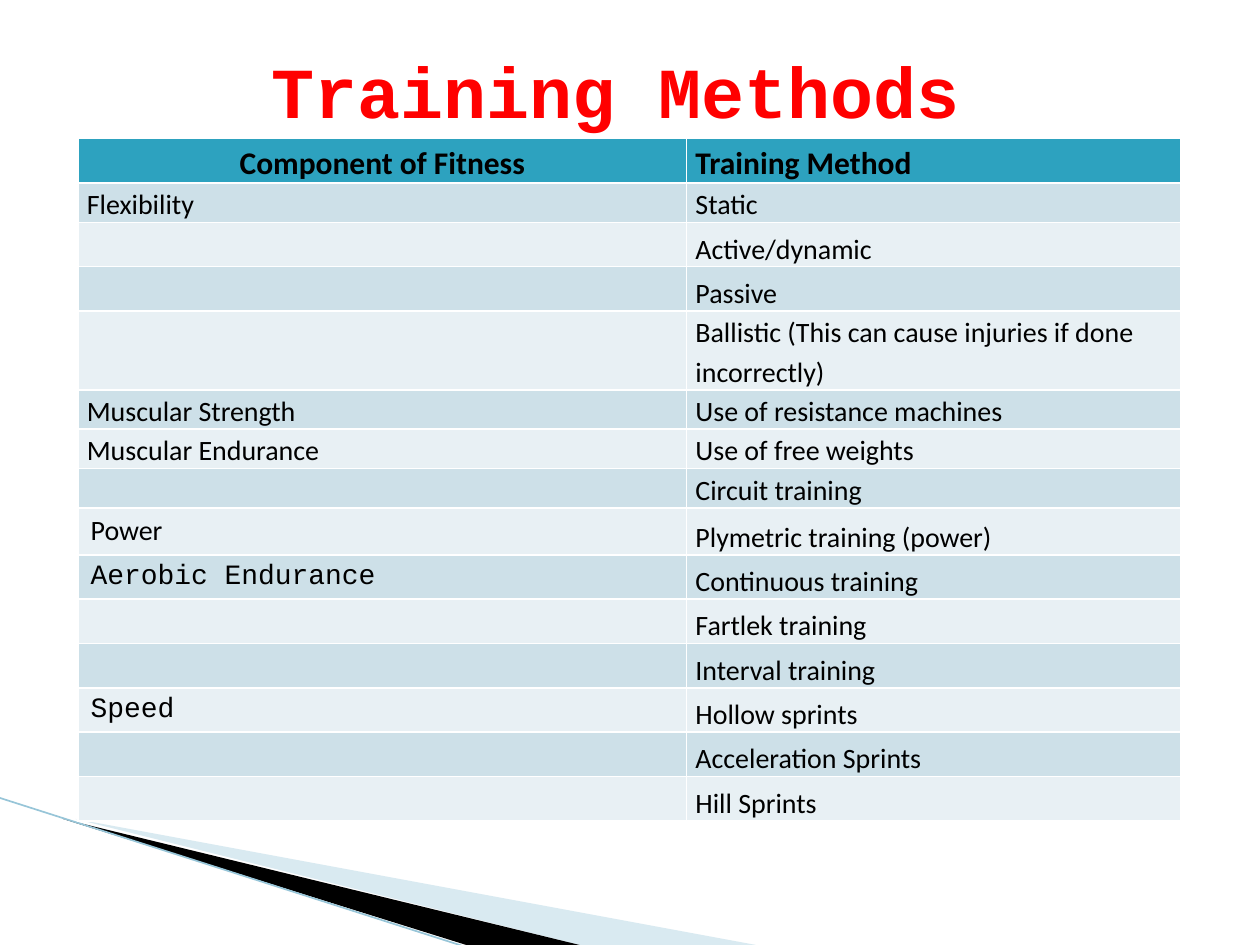
"""Build the Training Methods slide: fitness components and how to train them."""
from dataclasses import dataclass

from lxml import etree
from pptx import Presentation, util as u
from pptx.dml.color import RGBColor
from pptx.enum import shapes, text
from pptx.oxml import ns


@dataclass(frozen=True)
class Theme:
    """Colours, fonts and type sizes."""
    title: str = "FF0000"
    ink: str = "000000"
    header: str = "2DA2BF"
    bands: tuple = ("CDE0E8", "E8F0F4")
    swoosh: str = "A0CBDC"
    edge: str = "97C5D8"
    sans: str = "Calibri"
    mono: str = "Courier New"
    title_size: float = 41
    header_size: float = 18
    body_size: float = 16


class Deck:
    """Holds the theme and the slide, on a grid of 100 columns by 75 rows."""

    def __init__(self, theme):
        """Start a presentation with one blank slide."""
        self.theme = theme
        self.prs = Presentation()
        self.prs.slide_width, self.prs.slide_height = u.Inches(10), u.Inches(7.5)
        self.unit = self.prs.slide_width / 100
        self.slide = self.prs.slides.add_slide(self.prs.slide_layouts[6])

    def grid(self, *counts):
        """Turn counts of grid units into lengths."""
        return [u.Emu(round(count * self.unit)) for count in counts]

    @staticmethod
    def apply(target, **values):
        """Set each named value on the target."""
        for name, value in values.items():
            setattr(target, name, value)

    def put_text(self, frame, words, color, align=None, spacing=None, **font):
        """Put one paragraph into a text frame."""
        paragraph = frame.paragraphs[0]
        self.apply(paragraph, alignment=align, line_spacing=spacing)
        run = paragraph.add_run()
        run.text = words
        self.apply(run.font, **font)
        run.font.color.rgb = RGBColor.from_string(color)

    def wedge(self, points, color, opacity=None):
        """Draw a filled outline without a line."""
        builder = self.slide.shapes.build_freeform(*points[0], scale=self.unit)
        builder.add_line_segments(points[1:], close=True)
        shape = builder.convert_to_shape()
        shape.shadow.inherit = False
        shape.line.fill.background()
        shape.fill.solid()
        shape.fill.fore_color.rgb = RGBColor.from_string(color)
        if opacity:
            tint = shape._element.spPr.find(".//" + ns.qn("a:srgbClr"))
            etree.SubElement(tint, ns.qn("a:alpha"), val=str(opacity * 1000))

    def line(self, start, end, color, width):
        """Draw a straight line."""
        rule = self.slide.shapes.add_connector(
            shapes.MSO_CONNECTOR.STRAIGHT, *self.grid(*start, *end))
        rule.line.color.rgb = RGBColor.from_string(color)
        rule.line.width = u.Pt(width)
        etree.SubElement(rule._element.spPr, ns.qn("a:effectLst"))

    def title(self, words, box):
        """Add the centred heading."""
        frame = self.slide.shapes.add_textbox(*self.grid(*box)).text_frame
        self.apply(frame, word_wrap=True, margin_top=u.Inches(0.23),
                   vertical_anchor=text.MSO_ANCHOR.MIDDLE)
        self.put_text(frame, words, self.theme.title, text.PP_ALIGN.CENTER,
                      name=self.theme.mono, size=u.Pt(self.theme.title_size), bold=True)

    def cell(self, cell, words, fill, loose=False, **style):
        """Fill a cell; loose cells keep the default margins and top anchor."""
        cell.fill.solid()
        cell.fill.fore_color.rgb = RGBColor.from_string(fill)
        if not loose:
            side = u.Inches(0.07)
            self.apply(cell, margin_left=side, margin_right=side, margin_top=0,
                       margin_bottom=0, vertical_anchor=text.MSO_ANCHOR.BOTTOM)
            style["spacing"] = 1.15
        if words:
            self.put_text(cell.text_frame, words, self.theme.ink, **style)

    def table(self, headings, methods, corner, columns, heights):
        """Add the banded table of components and methods."""
        box = self.grid(*corner, sum(columns), sum(heights))
        table = self.slide.shapes.add_table(len(heights), len(columns), *box).table
        for column, width in zip(table.columns, self.grid(*columns)):
            column.width = width
        for row, height in zip(table.rows, self.grid(*heights)):
            row.height = height
        for index, (heading, align) in enumerate(headings):
            self.cell(table.cell(0, index), heading, self.theme.header, align=align,
                      name=self.theme.sans, size=u.Pt(self.theme.header_size), bold=True)
        loose_fonts = {"Power": self.theme.sans, "Aerobic Endurance": self.theme.mono,
                       "Speed": self.theme.mono}
        for number, row in enumerate(methods, 1):
            fill = self.theme.bands[(number - 1) % 2]
            for index, words in enumerate(row):
                self.cell(table.cell(number, index), words, fill, words in loose_fonts,
                          name=loose_fonts.get(words, self.theme.sans),
                          size=u.Pt(self.theme.body_size), bold=False)


HEADINGS = [("Component of Fitness", text.PP_ALIGN.CENTER), ("Training Method", None)]
METHODS = [
    ("Flexibility", "Static"),
    ("", "Active/dynamic"),
    ("", "Passive"),
    ("", "Ballistic (This can cause injuries if done incorrectly)"),
    ("Muscular Strength", "Use of resistance machines"),
    ("Muscular Endurance", "Use of free weights"),
    ("", "Circuit training"),
    ("Power", "Plymetric training (power)"),
    ("Aerobic Endurance", "Continuous training"),
    ("", "Fartlek training"),
    ("", "Interval training"),
    ("Speed", "Hollow sprints"),
    ("", "Acceleration Sprints"),
    ("", "Hill Sprints"),
]
TIGHT, ROOMY = 3.12, 3.52
HEIGHTS = [ROOMY, TIGHT, ROOMY, ROOMY, 2 * TIGHT, *[TIGHT] * 3, 3.72, *[ROOMY] * 6]


def main():
    """Build and save the slide."""
    theme = Theme()
    deck = Deck(theme)
    deck.wedge([(5.5, 65.1), (59.5, 75.1), (45.6, 75.1), (5.5, 65)], theme.swoosh, 40)
    deck.wedge([(5.3, 64.9), (45.7, 75.1), (37.2, 75.2), (5.4, 65)], theme.ink)
    deck.line((-0.1, 63.3), (37.1, 75.2), theme.edge, 0.95)
    deck.table(HEADINGS, METHODS, (6.2, 11), (48.3, 39.2), HEIGHTS)
    deck.title("Training Methods", (3.9, 0, 90, 12.5))
    deck.prs.save("out.pptx")


if __name__ == "__main__":
    main()
